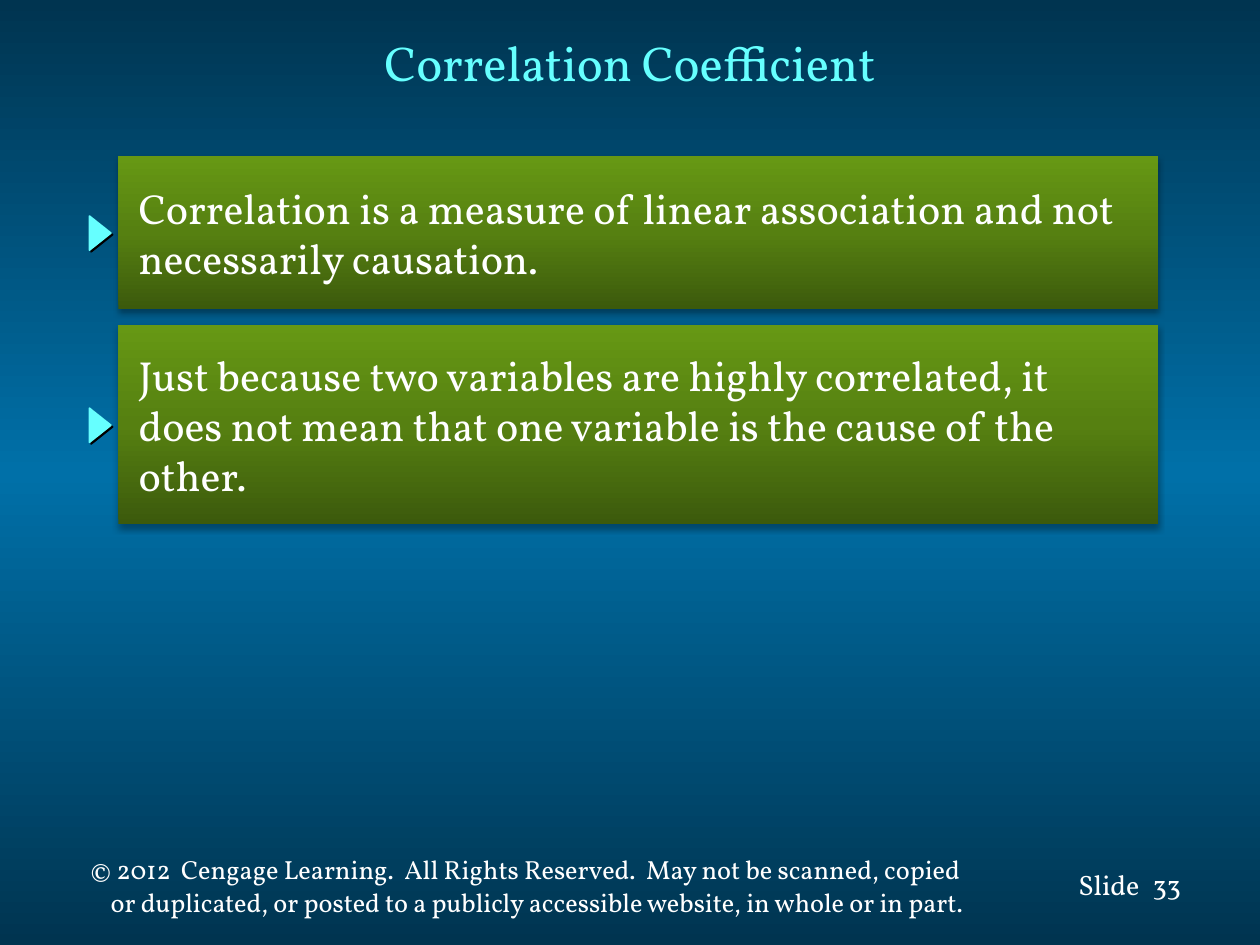
from copy import deepcopy
from lxml.etree import SubElement
from pptx import Presentation
from pptx.dml.color import RGBColor
from pptx.enum.shapes import MSO_SHAPE as Shape
from pptx.enum.text import MSO_ANCHOR as Anchor, PP_ALIGN as Align
from pptx.oxml.ns import qn
from pptx.util import Inches, Pt

COLORS = {
    "night": "003450", "sea": "0070A8", "aqua": "66FFFF", "white": "FFFFFF",
    "moss": "3C5A0C", "leaf": "568011", "grass": "669814", "black": "000000",
}
BOX_SHADOW = {"alpha": 32, "blur": 3.5, "dist": 2.2, "angle": 90}
HARD_SHADOW = {"alpha": 100, "blur": 0, "dist": 1.4, "angle": 45}


def rgb(name):
    """Return the named palette colour."""
    return RGBColor.from_string(COLORS[name])


def set_all(target, values):
    """Set every attribute listed in values on target."""
    for name, value in values.items():
        setattr(target, name, value)


class SlideBuilder:
    """Holds the style and the current slide."""

    font_name = "Vollkorn"

    def __init__(self, deck):
        """Add a title-only slide to the deck."""
        self.slide = deck.slides.add_slide(deck.slide_layouts[5])

    def gradient(self, fill, owner, names, angle):
        """Give a fill three evenly spaced colour stops."""
        fill.gradient()
        fill.gradient_angle = angle
        stops = next(owner.iter(qn("a:gsLst")))
        stops.append(deepcopy(stops[-1]))
        for index, (stop, name) in enumerate(zip(fill.gradient_stops, names)):
            stop.color.rgb = rgb(name)
            stop.position = index / 2

    def shadow(self, effects, alpha, blur, dist, angle):
        """Add an outer shadow to an effect list."""
        outer = SubElement(effects, qn("a:outerShdw"), {
            "blurRad": str(Pt(blur)), "dist": str(Pt(dist)),
            "dir": str(angle * 60000), "algn": "ctr", "rotWithShape": "0"})
        black = SubElement(outer, qn("a:srgbClr"), val=COLORS["black"])
        SubElement(black, qn("a:alpha"), val=str(alpha * 1000))

    def fill_text(self, frame, lines, size, color="white", shadowed=False,
                  indents=(), frame_format=None, **paragraph_format):
        """Fill a text frame with one paragraph per line."""
        set_all(frame, {"word_wrap": True, "vertical_anchor": Anchor.MIDDLE,
                        **(frame_format or {})})
        for index, line in enumerate(lines):
            paragraph = frame.add_paragraph() if index else frame.paragraphs[0]
            set_all(paragraph, {"alignment": Align.LEFT, **paragraph_format})
            if index == 0:
                paragraph.space_before = Pt(0)
            if indents:
                properties = paragraph._p.get_or_add_pPr()
                properties.set("marL", str(indents[index]))
                properties.set("indent", "0")
            run = paragraph.add_run()
            run.text = line
            if shadowed:
                properties = run._r.get_or_add_rPr()
                self.shadow(SubElement(properties, qn("a:effectLst")), **HARD_SHADOW)
            set_all(run.font, {"name": self.font_name, "size": Pt(size), "bold": False})
            run.font.color.rgb = rgb(color)

    def background(self):
        """Paint the background with a lighter middle band."""
        self.gradient(self.slide.background.fill, self.slide.element,
                      ("night", "sea", "night"), 270)

    def title(self, text):
        """Place and fill the slide title."""
        heading = self.slide.shapes.title
        set_all(heading, {"left": Inches(0.75), "top": Inches(0.04),
                          "width": Inches(8.5), "height": Inches(0.9)})
        self.fill_text(heading.text_frame, [text], 28, "aqua", alignment=Align.CENTER)

    def shape(self, kind, left, top, width, height, shadow):
        """Add a preset shape with its own shadow."""
        added = self.slide.shapes.add_shape(
            kind, Inches(left), Inches(top), Inches(width), Inches(height))
        added.shadow.inherit = False
        self.shadow(next(added.element.iter(qn("a:effectLst"))), **shadow)
        return added

    def statement(self, lines, top, height):
        """Add a green statement box with its pointer."""
        box = self.shape(Shape.RECTANGLE, 0.94, top, 8.25, height, BOX_SHADOW)
        self.gradient(box.fill, box.element, ("moss", "leaf", "grass"), 90)
        box.line.fill.background()
        self.fill_text(box.text_frame, lines, 24,
                       frame_format={"margin_left": Inches(0.16)})
        pointer = self.shape(Shape.ISOSCELES_TRIANGLE, 0.66, top + height / 2 - 0.08,
                             0.27, 0.17, HARD_SHADOW)
        pointer.rotation = 90
        pointer.fill.solid()
        pointer.fill.fore_color.rgb = rgb("aqua")
        pointer.line.color.rgb = rgb("aqua")
        pointer.line.width = Pt(1)

    def text(self, lines, left, top, width, height, size, **options):
        """Add a plain text box."""
        box = self.slide.shapes.add_textbox(
            Inches(left), Inches(top), Inches(width), Inches(height))
        self.fill_text(box.text_frame, lines, size, **options)


def main():
    """Build and save the slide."""
    deck = Presentation()
    set_all(deck, {"slide_width": Inches(10), "slide_height": Inches(7.5)})
    builder = SlideBuilder(deck)
    builder.background()
    builder.title("Correlation Coefficient")
    builder.statement(["Correlation is a measure of linear association and not",
                       "necessarily causation."], 1.24, 1.21)
    builder.statement(["Just because two variables are highly correlated, it",
                       "does not mean that one variable is the cause of the",
                       "other."], 2.58, 1.58)
    builder.text(
        ["© 2012  Cengage Learning.  All Rights Reserved.  May not be scanned, copied",
         "or duplicated, or posted to a publicly accessible website, in whole or in part."],
        0.62, 6.74, 7.47, 0.6, 15, indents=(0, Inches(0.16)),
        frame_format={"word_wrap": False},
        line_spacing=Pt(16), space_before=Pt(3))
    for label, left in (("Slide", 8.46), ("33", 9.05)):
        builder.text([label], left, 6.83, 0.7, 0.37, 16, shadowed=True)
    deck.save("out.pptx")


if __name__ == "__main__":
    main()
